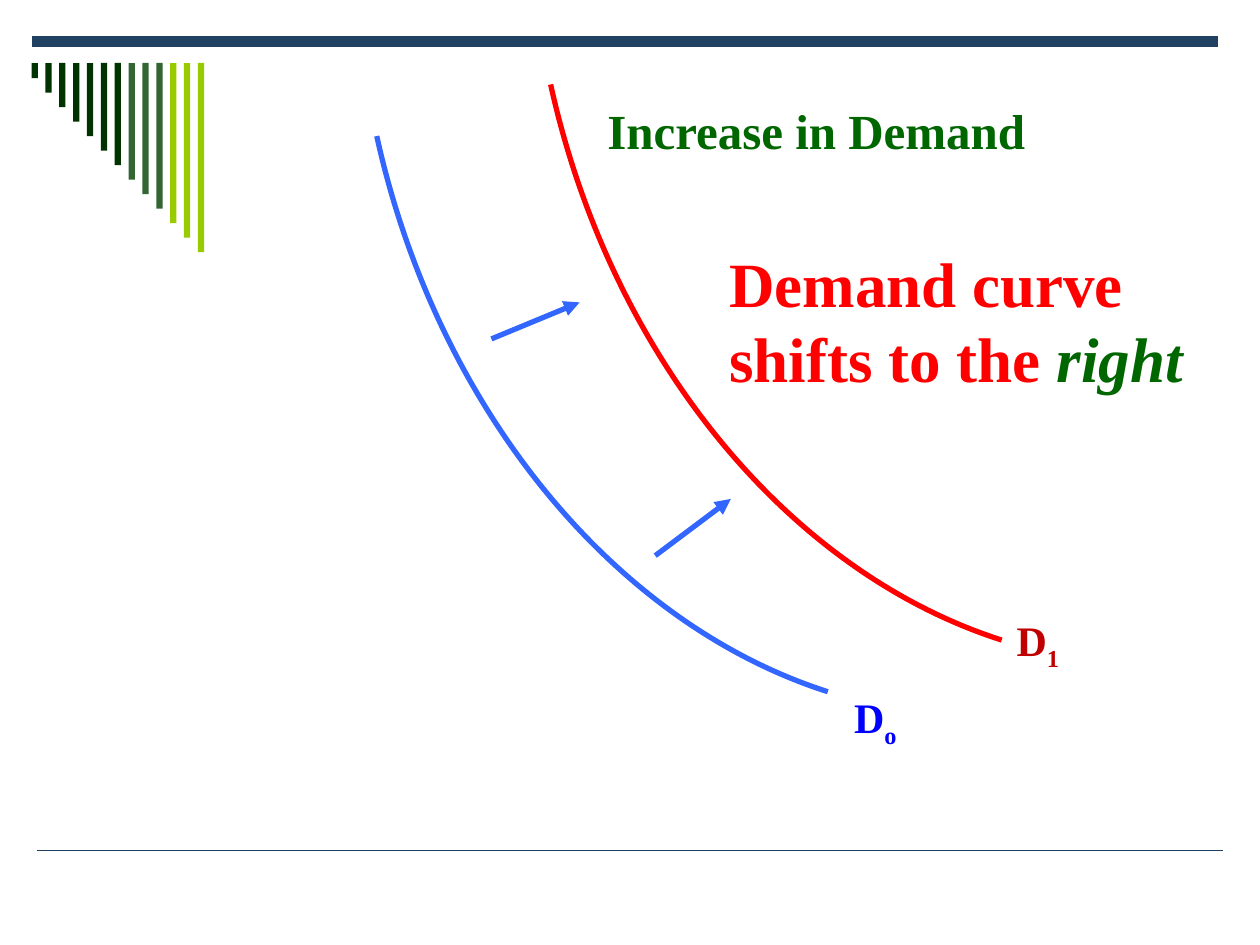
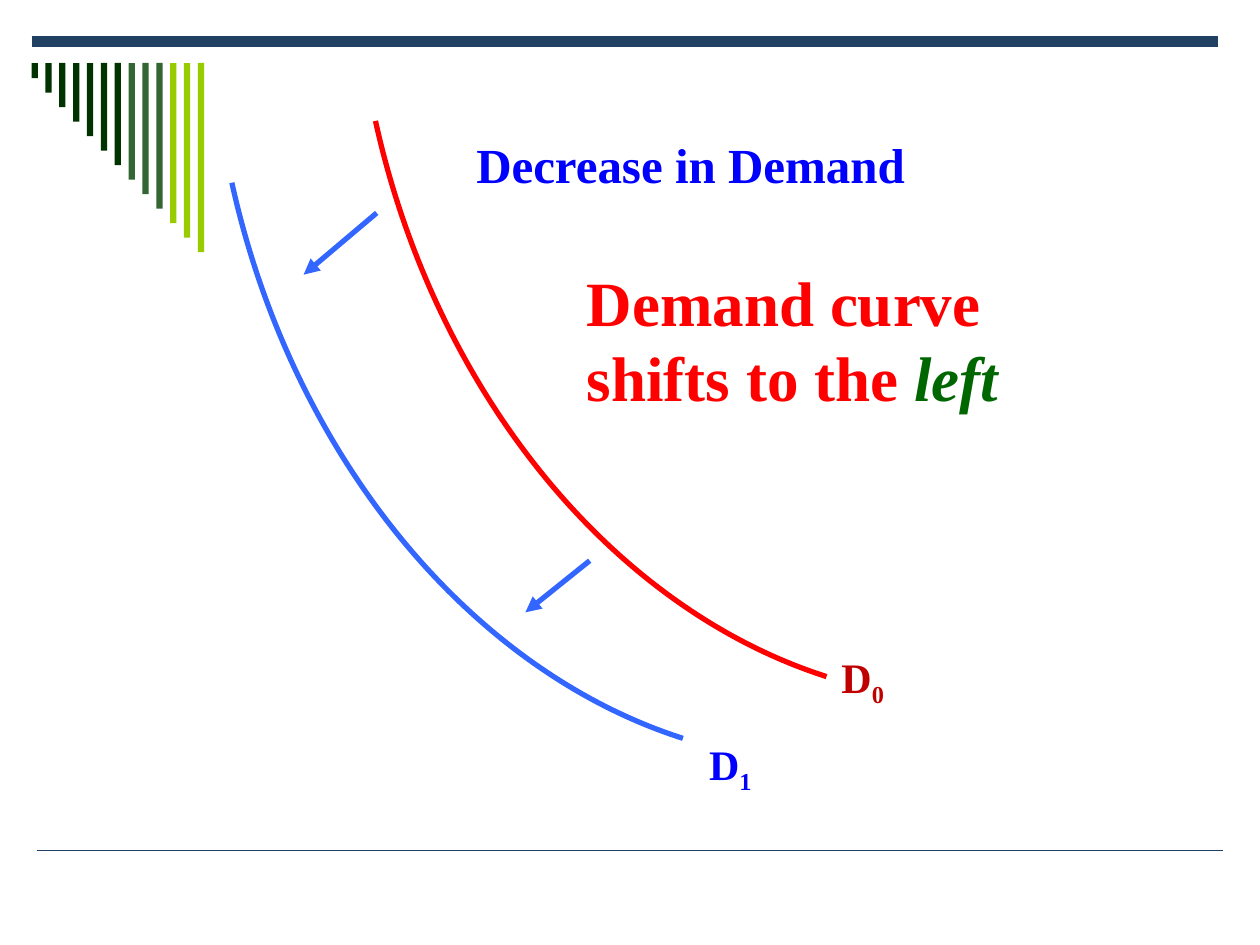
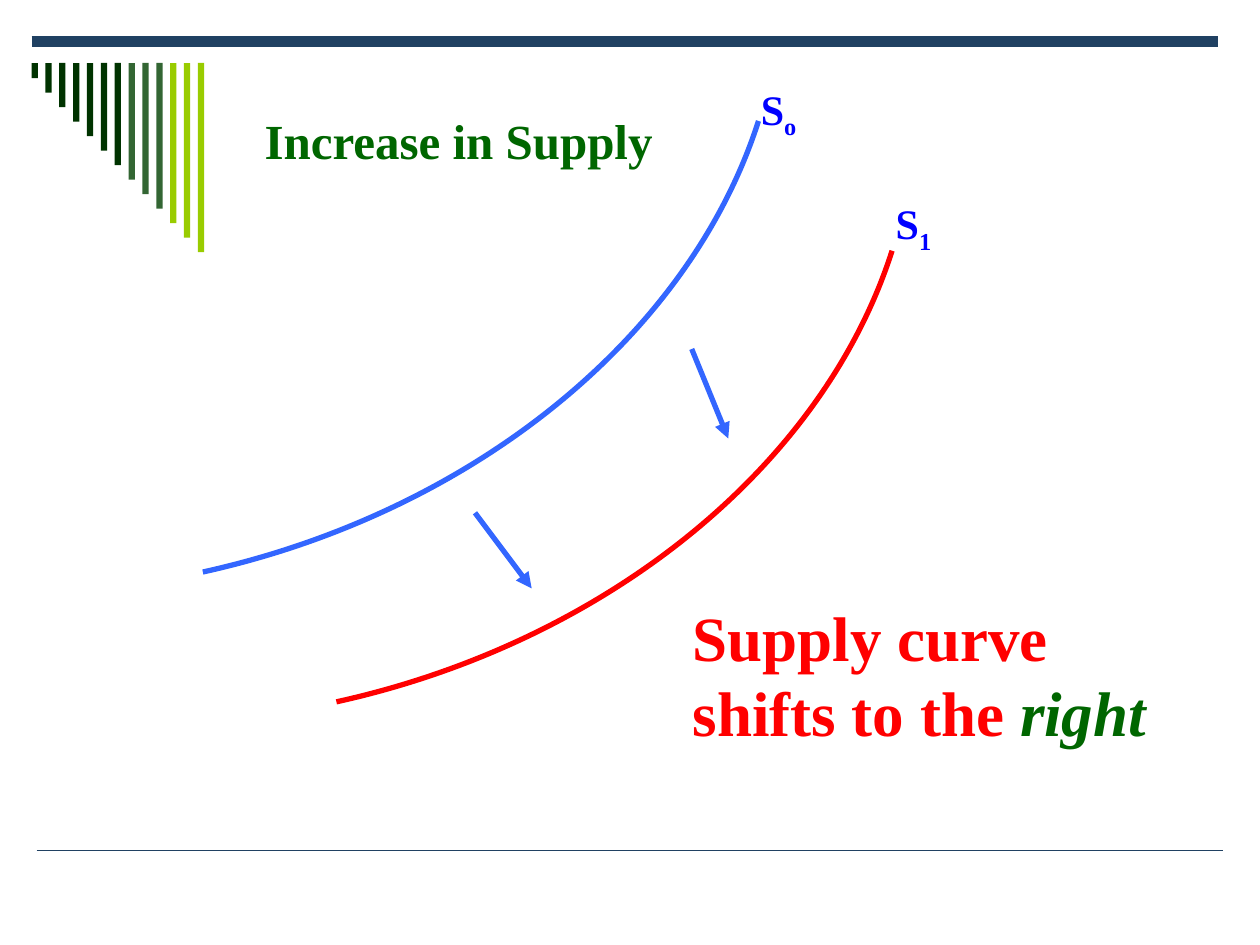
from pptx import Presentation
from pptx.dml.color import RGBColor
from pptx.enum.shapes import MSO_CONNECTOR as Connector, MSO_SHAPE as Preset
from pptx.enum.text import MSO_ANCHOR as Anchor, MSO_AUTO_SIZE as AutoSize, PP_ALIGN as Align
from pptx.oxml.ns import qn
from pptx.oxml.xmlchemy import OxmlElement
from pptx.util import Inches, Pt

NAVY, BLUE, SKY = "204162", "0000FF", "3366FF"
RED, CRIMSON, GREEN = "FF0000", "C00000", "006600"
BAR_COLOURS = ["003300"] * 7 + ["336633"] * 3 + ["99CC00"] * 3
DEMAND_BEND = [(-1.72, -0.55), (-3.11, -2.28), (-3.58, -4.41)]
SUPPLY_BEND = [(dy, -dx) for dx, dy in DEMAND_BEND]


def colour(code):
    return RGBColor.from_string(code)


class Deck:
    font = "Times New Roman"
    title_size, label_size, message_size = 28, 24, 36
    stroke = 3

    def __init__(self):
        self.presentation = Presentation()
        self.presentation.slide_width = Inches(10)
        self.presentation.slide_height = Inches(7.5)
        self.layout = self.presentation.slide_layouts[5]
        self.slide = None

    def add_slide(self, title, left, top, title_colour):
        first = self.slide is None
        self.slide = self.presentation.slides.add_slide(self.layout)
        if first:
            self.decorate_layout()
        heading = self.slide.shapes.title
        heading.left, heading.top = Inches(left), Inches(top)
        heading.width, heading.height = Inches(3.68), Inches(0.57)
        self.set_text(heading, [title], self.title_size, [title_colour])

    def decorate_layout(self):
        decorations = [
            self.line((0.29, 6.75), (9.71, 6.75), NAVY, 1),
            self.line((0.25, 0.33), (9.67, 0.33), NAVY, 6),
        ]
        for step, shade in enumerate(BAR_COLOURS):
            decorations.append(self.bar(0.25 + 0.11 * step, 0.12 * (1 + 0.96 * step), shade))
        for decoration in decorations:
            self.layout.shapes.element.append(decoration.element)

    def bar(self, left, height, shade):
        bar = self.slide.shapes.add_shape(
            Preset.RECTANGLE, Inches(left), Inches(0.5), Inches(0.05), Inches(height))
        bar.shadow.inherit = False
        bar.fill.solid()
        bar.fill.fore_color.rgb = colour(shade)
        bar.line.fill.background()
        return bar

    def line(self, start, end, shade, width):
        line = self.slide.shapes.add_connector(
            Connector.STRAIGHT, *map(Inches, start + end))
        line.line.color.rgb = colour(shade)
        line.line.width = Pt(width)
        line.element.spPr.append(OxmlElement("a:effectLst"))
        return line

    def arrow(self, start, end):
        arrow = self.line(start, end, SKY, self.stroke)
        head = OxmlElement("a:tailEnd")
        head.set("type", "triangle")
        arrow.element.spPr.get_or_add_ln().append(head)

    def curve(self, start, bend, shade):
        x, y = start
        points = [(Inches(x + dx), Inches(y + dy)) for dx, dy in bend]
        builder = self.slide.shapes.build_freeform(Inches(x), Inches(y))
        curve = builder.add_line_segments(points, close=False).convert_to_shape()
        segments = list(curve.element.iter(qn("a:lnTo")))
        bezier = OxmlElement("a:cubicBezTo")
        segments[0].addprevious(bezier)
        for segment in segments:
            bezier.append(segment[0])
            segment.getparent().remove(segment)
        curve.shadow.inherit = False
        curve.fill.background()
        curve.line.color.rgb = colour(shade)
        curve.line.width = Pt(self.stroke)

    def text(self, left, top, width, height, parts, size, colours):
        box = self.slide.shapes.add_textbox(*map(Inches, (left, top, width, height)))
        return self.set_text(box, parts, size, colours)

    def set_text(self, holder, parts, size, colours):
        frame = holder.text_frame
        frame.word_wrap = True
        frame.auto_size = AutoSize.NONE
        frame.vertical_anchor = Anchor.TOP
        paragraph = frame.paragraphs[0]
        paragraph.alignment = Align.LEFT
        for part, shade in zip(parts, colours):
            run = paragraph.add_run()
            run.text = part
            run.font.name = self.font
            run.font.size = Pt(size)
            run.font.bold = True
            run.font.color.rgb = colour(shade)
        return paragraph.runs

    def label(self, left, top, letter, index, shade):
        runs = self.text(left, top, 0.78, 0.5, [letter, index], self.label_size, [shade] * 2)
        runs[1].font._element.set("baseline", "-25000")

    def message(self, left, top, curve_name, direction):
        runs = self.text(left, top, 3.9, 1.3, [f"{curve_name} curve shifts to the ", direction],
                         self.message_size, [RED, GREEN])
        runs[1].font.italic = True


def main():
    deck = Deck()

    deck.add_slide("Increase in Demand", 4.72, 0.75, GREEN)
    deck.arrow((3.9, 2.69), (4.6, 2.4))
    deck.arrow((5.2, 4.41), (5.8, 3.96))
    deck.curve((6.57, 5.49), DEMAND_BEND, SKY)
    deck.label(6.68, 5.44, "D", "o", BLUE)
    deck.label(7.97, 4.83, "D", "1", CRIMSON)
    deck.curve((7.95, 5.08), DEMAND_BEND, RED)
    deck.message(5.69, 1.89, "Demand", "right")

    deck.add_slide("Decrease in Demand", 3.68, 1.02, BLUE)
    deck.arrow((2.99, 1.69), (2.41, 2.18))
    deck.arrow((4.68, 4.45), (4.17, 4.86))
    deck.curve((5.42, 5.86), DEMAND_BEND, SKY)
    deck.label(5.53, 5.81, "D", "1", BLUE)
    deck.label(6.58, 5.12, "D", "0", CRIMSON)
    deck.curve((6.56, 5.37), DEMAND_BEND, RED)
    deck.message(4.56, 2.04, "Demand", "left")

    deck.add_slide("Increase in Supply", 2, 0.83, GREEN)
    deck.arrow((5.49, 2.77), (5.78, 3.48))
    deck.arrow((3.77, 4.07), (4.22, 4.67))
    deck.curve((6.02, 0.96), SUPPLY_BEND, SKY)
    deck.label(5.94, 0.61, "S", "o", BLUE)
    deck.message(5.4, 4.7, "Supply", "right")
    deck.curve((7.08, 1.99), SUPPLY_BEND, RED)
    deck.label(7.01, 1.52, "S", "1", BLUE)

    deck.presentation.save("out.pptx")


if __name__ == "__main__":
    main()
